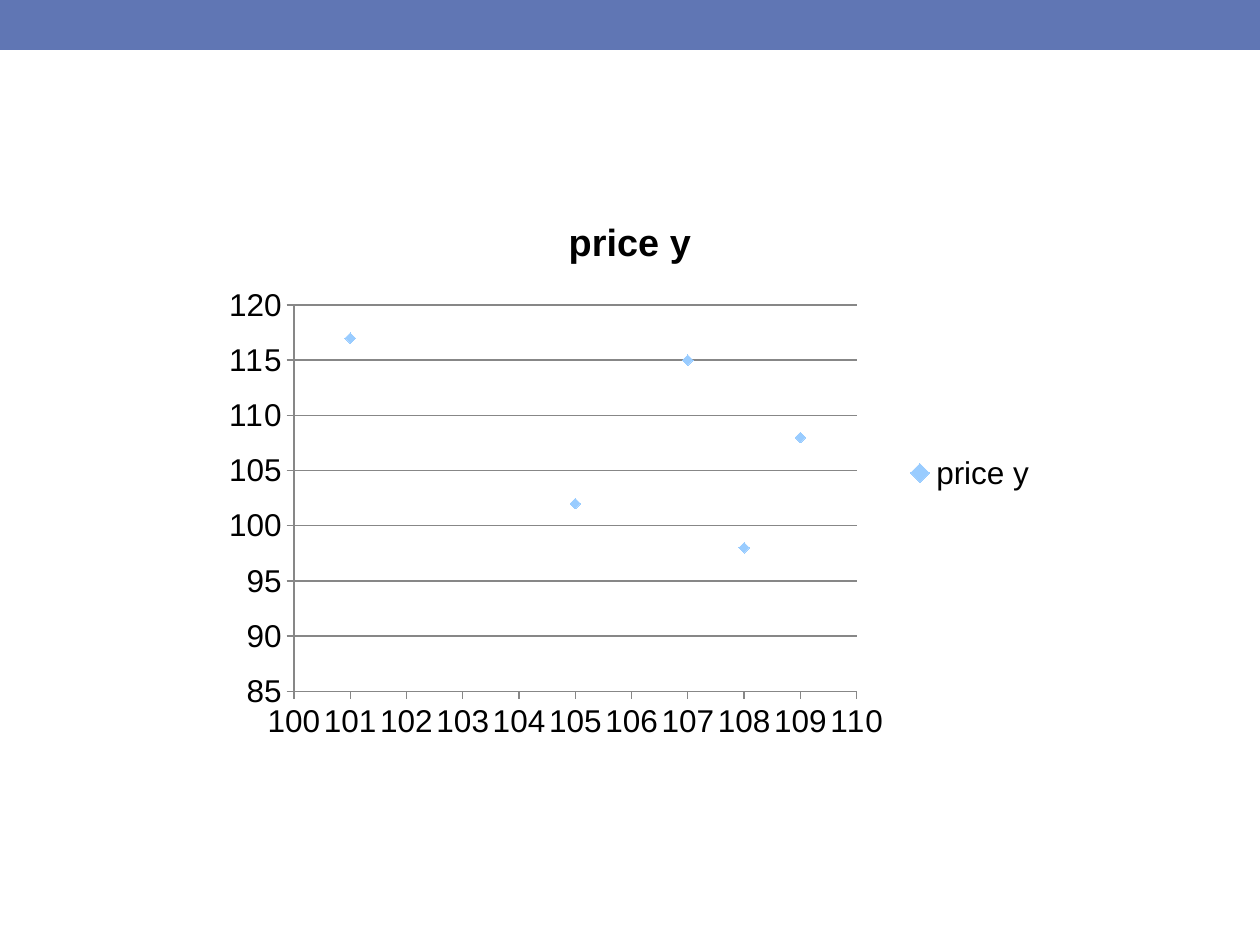
from lxml import etree
from pptx import Presentation
from pptx.chart.data import XyChartData
from pptx.dml.color import RGBColor
from pptx.enum.chart import (XL_CHART_TYPE, XL_LEGEND_POSITION,
                             XL_MARKER_STYLE, XL_TICK_MARK)
from pptx.enum.shapes import MSO_SHAPE
from pptx.oxml.ns import qn
from pptx.util import Emu, Pt

SCATTER = XL_CHART_TYPE.XY_SCATTER
RIGHT = XL_LEGEND_POSITION.RIGHT
DIAMOND = XL_MARKER_STYLE.DIAMOND
OUTSIDE, NO_TICK = XL_TICK_MARK.OUTSIDE, XL_TICK_MARK.NONE
RECT = MSO_SHAPE.RECTANGLE

SCALE = 914400 // 126
FONT = "Arial"
BAND, POINT, GRID, INK = "6076B4", "99CCFF", "878787", "000000"
NAME = "price y"
PRICES = [(101, 117), (108, 98), (105, 102), (107, 115), (109, 108)]


def px(n):
    return Emu(n * SCALE)


def color(code):
    return RGBColor.from_string(code)


def paint(fill, code):
    fill.solid()
    fill.fore_color.rgb = color(code)


def style(font, size, bold=False):
    font.name, font.size, font.bold = FONT, Pt(size), bold
    font.color.rgb = color(INK)


def add_band(slide):
    band = slide.shapes.add_shape(RECT, 0, 0, px(1260), px(50))
    band.shadow.inherit = False
    paint(band.fill, BAND)
    band.line.fill.background()


def set_axis(axis, low, high, step):
    axis.minimum_scale, axis.maximum_scale = low, high
    axis.major_unit = step
    axis.major_tick_mark, axis.minor_tick_mark = OUTSIDE, NO_TICK
    axis.format.line.color.rgb = color(GRID)
    style(axis.tick_labels.font, 18)


def place_plot(chart, x, y, w, h):
    """Fix the inner plot area, in fractions of the chart."""
    area = chart.element.find(".//" + qn("c:plotArea"))
    old = area.find(qn("c:layout"))
    if old is not None:
        area.remove(old)
    layout = etree.Element(qn("c:layout"))
    area.insert(0, layout)
    manual = etree.SubElement(layout, qn("c:manualLayout"))
    rules = [("layoutTarget", "inner"), ("xMode", "edge"), ("yMode", "edge"),
             ("x", x), ("y", y), ("w", w), ("h", h)]
    for tag, value in rules:
        etree.SubElement(manual, qn("c:" + tag)).set("val", str(value))


def add_scatter(slide):
    data = XyChartData()
    series = data.add_series(NAME)
    for x, y in PRICES:
        series.add_data_point(x, y)
    frame = slide.shapes.add_chart(
        SCATTER, px(210), px(193), px(840), px(560), data)
    chart = frame.chart
    style(chart.font, 18)

    chart.has_title = True
    title = chart.chart_title.text_frame
    title.text = NAME
    style(title.paragraphs[0].font, 21.6, True)
    chart.has_legend = True
    chart.legend.position = RIGHT
    chart.legend.include_in_layout = False
    style(chart.legend.font, 18)

    set_axis(chart.category_axis, 100, 110, 1)
    set_axis(chart.value_axis, 85, 120, 5)
    chart.category_axis.has_major_gridlines = False
    chart.value_axis.has_major_gridlines = True
    chart.value_axis.major_gridlines.format.line.color.rgb = color(GRID)

    plot = chart.plots[0]
    plot.vary_by_categories = False
    dots = plot.series[0]
    dots.format.line.fill.background()
    dots.marker.style, dots.marker.size = DIAMOND, 6
    paint(dots.marker.format.fill, POINT)
    dots.marker.format.line.fill.background()
    place_plot(chart, 0.1, 0.2, 0.67, 0.69)


def main():
    deck = Presentation()
    deck.slide_width, deck.slide_height = px(1260), px(945)
    slide = deck.slides.add_slide(deck.slide_layouts[6])
    add_band(slide)
    add_scatter(slide)
    deck.save("out.pptx")


if __name__ == "__main__":
    main()
